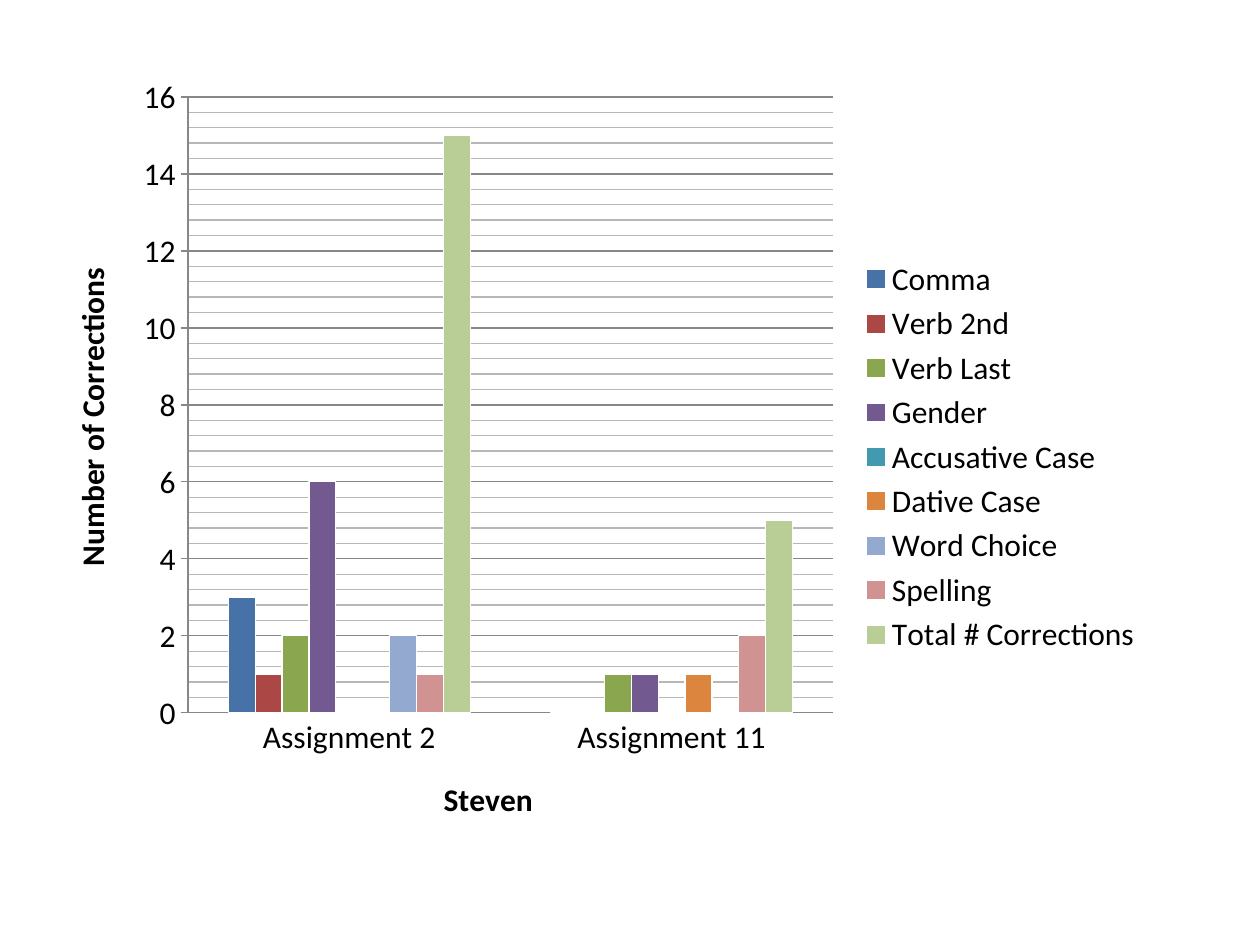
from typing import Any, NamedTuple

from lxml.etree import SubElement as Sub
from pptx import Presentation
from pptx.chart.data import CategoryChartData as Data
from pptx.dml.color import RGBColor as Rgb
from pptx.enum.chart import XL_CHART_TYPE as Kind
from pptx.enum.chart import XL_LEGEND_POSITION as Side
from pptx.enum.chart import XL_TICK_MARK as Tick
from pptx.oxml.ns import qn
from pptx.util import Emu, Pt

SCALE = 914400 / 126
FONT = "Calibri"


class Box(NamedTuple):
    """Place and size in px."""
    x: int
    y: int
    w: int
    h: int


class Row(NamedTuple):
    """One kind of correction, with a count for each assignment."""
    name: str
    vals: tuple[int, int]
    hue: str


FRAME = Box(42, 63, 1113, 788)
PLOT = Box(188, 97, 645, 616)
ROWS = [
    Row("Comma", (3, 0), "4672A8"),
    Row("Verb 2nd", (1, 0), "AB4744"),
    Row("Verb Last", (2, 1), "8AA64F"),
    Row("Gender", (6, 1), "725990"),
    Row("Accusative Case", (0, 0), "4299B0"),
    Row("Dative Case", (0, 1), "DC853E"),
    Row("Word Choice", (2, 0), "93A9CF"),
    Row("Spelling", (1, 2), "D19392"),
    Row("Total # Corrections", (15, 5), "B9CD96"),
]
COUNT = {
    "minimum_scale": 0, "maximum_scale": 16,
    "major_unit": 2, "minor_unit": 0.4,
    "has_major_gridlines": True, "has_minor_gridlines": True,
    "major_tick_mark": Tick.OUTSIDE, "minor_tick_mark": Tick.NONE,
}
GROUP = {"major_tick_mark": Tick.NONE, "minor_tick_mark": Tick.NONE}
KEY = {"position": Side.RIGHT, "include_in_layout": False}


def px(n: float) -> Emu:
    """Turn px into EMU."""
    return Emu(round(n * SCALE))


def color(hue: str) -> Rgb:
    """Turn a hex string into a colour."""
    return Rgb.from_string(hue)


def apply(obj: Any, vals: dict[str, Any]) -> None:
    """Set each attribute named in the dict."""
    for name, val in vals.items():
        setattr(obj, name, val)


def style(font: Any, bold: bool = False) -> None:
    """Give a font the face, size and colour of the chart."""
    apply(font, {"name": FONT, "size": Pt(18), "bold": bold})
    font.color.rgb = color("000000")


def stroke(line: Any, hue: str) -> None:
    """Draw a line in one thin colour."""
    line.color.rgb = color(hue)
    line.width = Pt(0.75)


def dress(axis: Any, title: str, vals: dict[str, Any]) -> None:
    """Format an axis and write its bold title."""
    apply(axis, vals)
    stroke(axis.format.line, "878787")
    style(axis.tick_labels.font)
    para = axis.axis_title.text_frame.paragraphs[0]
    run = para.add_run()
    run.text = title
    style(run.font, True)


def settle(chart: Any) -> None:
    """Fix the inner plot area at its place in the frame."""
    area = chart.element.find(".//" + qn("c:plotArea"))
    for old in area.findall(qn("c:layout")):
        area.remove(old)
    lay = Sub(area, qn("c:layout"))
    area.insert(0, lay)
    spot = Sub(lay, qn("c:manualLayout"))
    parts = {
        "layoutTarget": "inner", "xMode": "edge", "yMode": "edge",
        "x": (PLOT.x - FRAME.x) / FRAME.w,
        "y": (PLOT.y - FRAME.y) / FRAME.h,
        "w": PLOT.w / FRAME.w, "h": PLOT.h / FRAME.h,
    }
    for tag, val in parts.items():
        Sub(spot, qn(f"c:{tag}")).set("val", str(val))


def draw(slide: Any) -> None:
    """Add the column chart of corrections."""
    data = Data()
    data.categories = ["Assignment 2", "Assignment 11"]
    for row in ROWS:
        data.add_series(row.name, row.vals)
    chart = slide.shapes.add_chart(
        Kind.COLUMN_CLUSTERED, *map(px, FRAME), data).chart
    apply(chart, {"has_title": False, "has_legend": True})
    style(chart.font)
    apply(chart.legend, KEY)
    style(chart.legend.font)
    plot = chart.plots[0]
    apply(plot, {"gap_width": 300, "overlap": 0, "vary_by_categories": False})
    for bar, row in zip(plot.series, ROWS):
        bar.format.fill.solid()
        bar.format.fill.fore_color.rgb = color(row.hue)
        stroke(bar.format.line, "FFFFFF")
    dress(chart.category_axis, "Steven", GROUP)
    axis = chart.value_axis
    dress(axis, "Number of Corrections", COUNT)
    stroke(axis.major_gridlines.format.line, "878787")
    minor = Sub(axis.major_gridlines._xAx.find(qn("c:minorGridlines")),
                qn("c:spPr"))
    line = Sub(minor, qn("a:ln"), w=str(Pt(0.75)))
    Sub(Sub(line, qn("a:solidFill")), qn("a:srgbClr"), val="B7B7B7")
    settle(chart)


def main() -> None:
    """Build the slide and save it."""
    deck = Presentation()
    apply(deck, {"slide_width": px(1260), "slide_height": px(945)})
    draw(deck.slides.add_slide(deck.slide_layouts[6]))
    deck.save("out.pptx")


if __name__ == "__main__":
    main()
